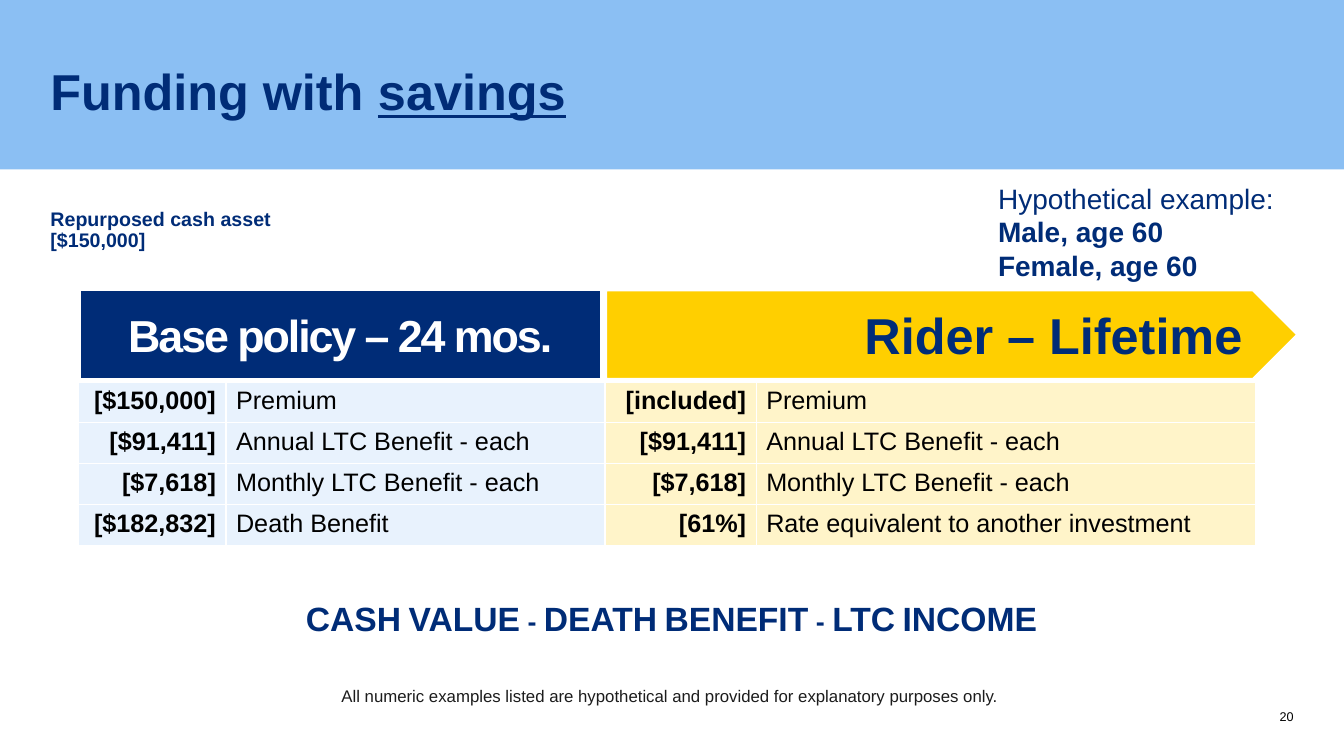
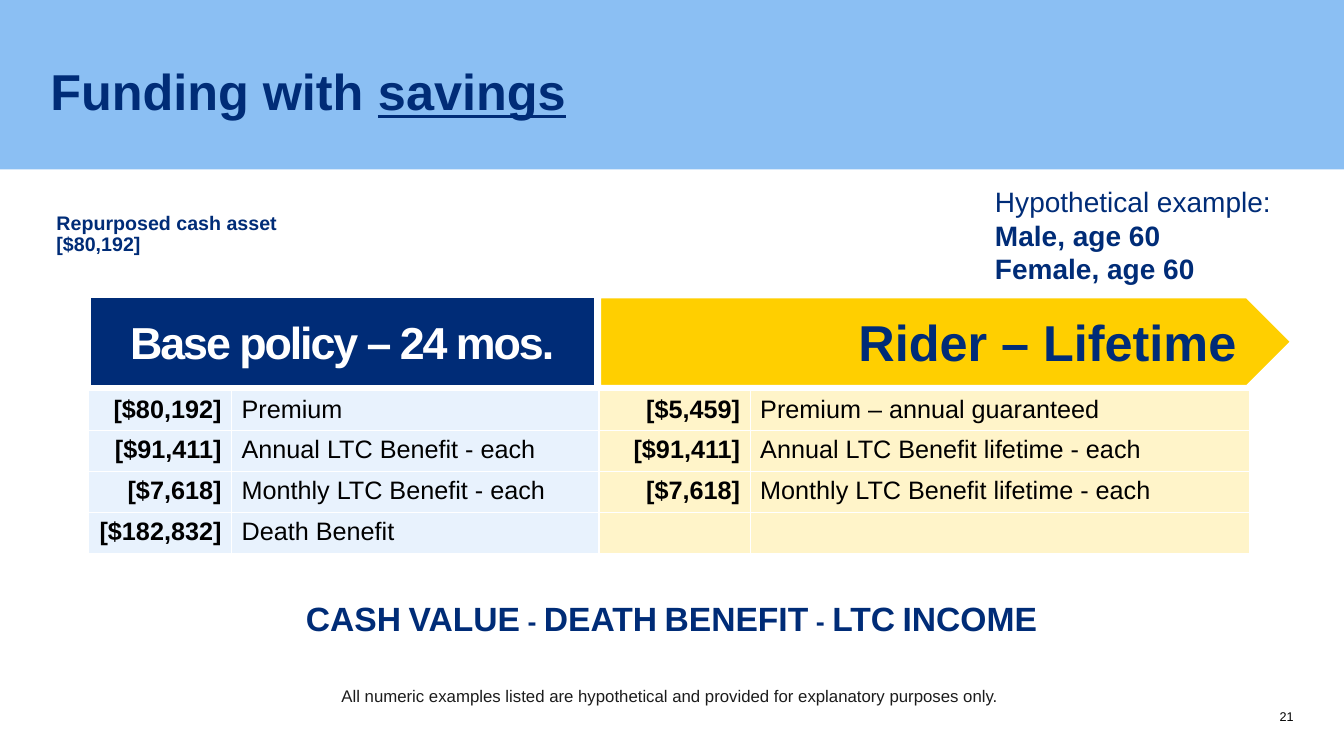
from dataclasses import dataclass

from lxml import etree
from pptx import Presentation
from pptx.dml.color import RGBColor
from pptx.enum.shapes import MSO_SHAPE
from pptx.enum.text import MSO_ANCHOR, PP_ALIGN
from pptx.oxml.ns import qn
from pptx.util import Inches, Pt

RECTANGLE, ARROW = MSO_SHAPE.RECTANGLE, MSO_SHAPE.PENTAGON
TOP, MIDDLE, BOTTOM = MSO_ANCHOR.TOP, MSO_ANCHOR.MIDDLE, MSO_ANCHOR.BOTTOM
LEFT, CENTER, RIGHT = PP_ALIGN.LEFT, PP_ALIGN.CENTER, PP_ALIGN.RIGHT


@dataclass(frozen=True)
class Theme:
    font: str = "Arial"
    navy: str = "002C77"
    sky: str = "8BBFF3"
    yellow: str = "FFCF00"
    pale_blue: str = "E8F2FD"
    pale_yellow: str = "FFE266"
    pale_yellow_opacity: int = 35
    white: str = "FFFFFF"
    black: str = "000000"
    grey: str = "1C1C1C"
    title_size: int = 36
    base_size: int = 32
    summary_size: int = 24
    example_size: int = 20
    table_size: int = 18
    asset_size: int = 14
    note_size: int = 12
    number_size: int = 9


THEME = Theme()
SLIDE_WIDTH, SLIDE_HEIGHT = 13.33, 7.5
FIRST_NUMBER = 20
HEADER_HEIGHT = 0.9
ROW_HEIGHT = 1.62 / 4
VALUE_SHARE = 0.28
RIDER_COLUMNS = (1.5, 4.95)


@dataclass(frozen=True)
class Funding:
    amount: str
    asset_at: tuple
    example_at: tuple
    left: float
    split: float
    header_top: float
    table_top: float
    base_rows: tuple
    rider_rows: tuple


def base_rows(premium):
    return (
        (premium, "Premium"),
        ("[$91,411]", "Annual LTC Benefit - each"),
        ("[$7,618]", "Monthly LTC Benefit - each"),
        ("[$182,832]", "Death Benefit"),
    )


FUNDINGS = (
    Funding(
        "[$150,000]", (0.5, 1.68), (9.8, 1.75), 0.78, 6.0, 2.87, 3.79,
        base_rows("[$150,000]"),
        (
            ("[included]", "Premium"),
            ("[$91,411]", "Annual LTC Benefit - each"),
            ("[$7,618]", "Monthly LTC Benefit - each"),
            ("[61%]", "Rate equivalent to another investment"),
        ),
    ),
    Funding(
        "[$80,192]", (0.56, 1.72), (9.77, 1.78), 0.88, 5.94, 2.94, 3.87,
        base_rows("[$80,192]"),
        (
            ("[$5,459]", "Premium – annual guaranteed"),
            ("[$91,411]", "Annual LTC Benefit lifetime - each"),
            ("[$7,618]", "Monthly LTC Benefit lifetime - each"),
            ("", ""),
        ),
    ),
)


def color(value):
    return RGBColor.from_string(value)


def format_run(run, size, ink, bold=False):
    run.font.name = THEME.font
    run.font.size = Pt(size)
    run.font.bold = bold
    run.font.color.rgb = color(ink)


def add_text(slide, box, lines, size, ink, bold=False, align=LEFT,
             anchor=TOP, flush=False, spacing=None):
    """Add a text box with one paragraph per line; flush drops the margins."""
    shape = slide.shapes.add_textbox(*map(Inches, box))
    frame = shape.text_frame
    frame.word_wrap = True
    frame.vertical_anchor = anchor
    if flush:
        frame.margin_left = frame.margin_right = 0
        frame.margin_top = frame.margin_bottom = 0
    frame.text = "\n".join(lines)
    for paragraph in frame.paragraphs:
        paragraph.alignment = align
        paragraph.line_spacing = spacing
        for run in paragraph.runs:
            format_run(run, size, ink, bold)
    return frame


def add_block(slide, kind, box, fill):
    shape = slide.shapes.add_shape(kind, *map(Inches, box))
    shape.shadow.inherit = False
    shape.fill.solid()
    shape.fill.fore_color.rgb = color(fill)
    shape.line.fill.background()
    return shape


def add_header(slide, kind, box, fill, text, size, ink, align):
    """Add a white-edged heading block and return it."""
    shape = add_block(slide, kind, box, fill)
    shape.line.color.rgb = color(THEME.white)
    shape.line.width = Pt(3)
    frame = shape.text_frame
    frame.vertical_anchor = MIDDLE
    frame.text = text
    paragraph = frame.paragraphs[0]
    paragraph.alignment = align
    format_run(paragraph.runs[0], size, ink, True)
    return shape


def style_cell(cell, fill, opacity):
    cell.fill.solid()
    cell.fill.fore_color.rgb = color(fill)
    properties = cell._tc.get_or_add_tcPr()
    if opacity < 100:
        tint = properties.find(".//" + qn("a:srgbClr"))
        etree.SubElement(tint, qn("a:alpha"), val=str(opacity * 1000))
    # Borders come before the fill in the cell properties
    for index, side in enumerate(("lnL", "lnR", "lnT", "lnB")):
        border = etree.Element(qn("a:" + side), w=str(Pt(1)))
        solid = etree.SubElement(border, qn("a:solidFill"))
        etree.SubElement(solid, qn("a:srgbClr"), val=THEME.white)
        properties.insert(index, border)


def add_benefits(slide, left, top, widths, rows, fill, opacity=100):
    """Add a table of bold values and their labels."""
    table = slide.shapes.add_table(
        len(rows), len(widths), Inches(left), Inches(top),
        Inches(sum(widths)), Inches(ROW_HEIGHT * len(rows))).table
    table.first_row = table.horz_banding = False
    for column, width in zip(table.columns, widths):
        column.width = Inches(width)
    for row, texts in zip(table.rows, rows):
        row.height = Inches(ROW_HEIGHT)
        for index, (cell, text) in enumerate(zip(row.cells, texts)):
            style_cell(cell, fill, opacity)
            cell.text = text
            paragraph = cell.text_frame.paragraphs[0]
            paragraph.alignment = LEFT if index else RIGHT
            for run in paragraph.runs:
                format_run(run, THEME.table_size, THEME.black, index == 0)


def add_slide_number(slide, number):
    frame = add_text(slide, (12.44, 6.93, 0.39, 0.25), [""],
                     THEME.number_size, THEME.black, align=RIGHT,
                     anchor=BOTTOM, flush=True)
    field = etree.SubElement(
        frame.paragraphs[0]._p, qn("a:fld"), type="slidenum",
        id="{B6F15528-21DE-4FAA-801E-634DDDAF4B2B}")
    properties = etree.SubElement(field, qn("a:rPr"), lang="en-US",
                                  sz=str(THEME.number_size * 100))
    solid = etree.SubElement(properties, qn("a:solidFill"))
    etree.SubElement(solid, qn("a:srgbClr"), val=THEME.black)
    etree.SubElement(properties, qn("a:latin"), typeface=THEME.font)
    etree.SubElement(field, qn("a:t")).text = str(number)


def add_frame(slide, number):
    """Add what every slide shares: band, title, summary and footer."""
    add_block(slide, RECTANGLE, (0, 0, SLIDE_WIDTH, 1.68), THEME.sky)
    title = add_text(slide, (0.5, 0.41, 12.33, 1.06), ["Funding with "],
                     THEME.title_size, THEME.navy, True,
                     anchor=MIDDLE, flush=True, spacing=0.9)
    source = title.paragraphs[0].add_run()
    source.text = "savings"
    format_run(source, THEME.title_size, THEME.navy, True)
    source.font.underline = True

    summary = add_text(slide, (1.1, 5.88, 11.12, 0.5),
                       ["CASH VALUE - DEATH BENEFIT - LTC INCOME"],
                       THEME.summary_size, THEME.navy, True, CENTER)
    summary.paragraphs[0].runs[0]._r.get_or_add_rPr().set("cap", "small")

    add_text(slide, (0, 6.75, 13.29, 0.3),
             ["All numeric examples listed are hypothetical and provided "
              "for explanatory purposes only."],
             THEME.note_size, THEME.grey, align=CENTER)
    add_slide_number(slide, number)


def add_funding(slide, funding):
    # Case description
    add_text(slide, (*funding.asset_at, 3.21, 1.22),
             ["Repurposed cash asset", funding.amount],
             THEME.asset_size, THEME.navy, True,
             anchor=MIDDLE, flush=True, spacing=0.9)
    example = add_text(slide, (*funding.example_at, 3.21, 1.11),
                       ["Hypothetical example:", "Male, age 60",
                        "Female, age 60"],
                       THEME.example_size, THEME.navy, True)
    example.paragraphs[0].runs[0].font.bold = False

    # Headings
    base_width = funding.split - funding.left
    rider = add_header(
        slide, ARROW, (funding.split, funding.header_top, 6.88, HEADER_HEIGHT),
        THEME.yellow, "Rider – Lifetime", THEME.title_size, THEME.navy, RIGHT)
    rider.text_frame.margin_right = Inches(0.33)
    base = add_header(
        slide, RECTANGLE,
        (funding.left, funding.header_top, base_width - 0.03, HEADER_HEIGHT),
        THEME.navy, "Base policy – 24 mos.", THEME.base_size, THEME.white,
        CENTER)
    run = base.text_frame.paragraphs[0].runs[0]
    run._r.get_or_add_rPr().set("spc", "-150")

    # Benefit tables
    value_width = base_width * VALUE_SHARE
    add_benefits(slide, funding.left, funding.table_top,
                 (value_width, base_width - value_width),
                 funding.base_rows, THEME.pale_blue)
    add_benefits(slide, funding.split, funding.table_top, RIDER_COLUMNS,
                 funding.rider_rows, THEME.pale_yellow,
                 THEME.pale_yellow_opacity)


def main():
    presentation = Presentation()
    presentation.slide_width = Inches(SLIDE_WIDTH)
    presentation.slide_height = Inches(SLIDE_HEIGHT)
    presentation.element.set("firstSlideNum", str(FIRST_NUMBER))
    blank = presentation.slide_layouts[6]
    for number, funding in enumerate(FUNDINGS, FIRST_NUMBER):
        slide = presentation.slides.add_slide(blank)
        add_frame(slide, number)
        add_funding(slide, funding)
    presentation.save("out.pptx")


if __name__ == "__main__":
    main()
